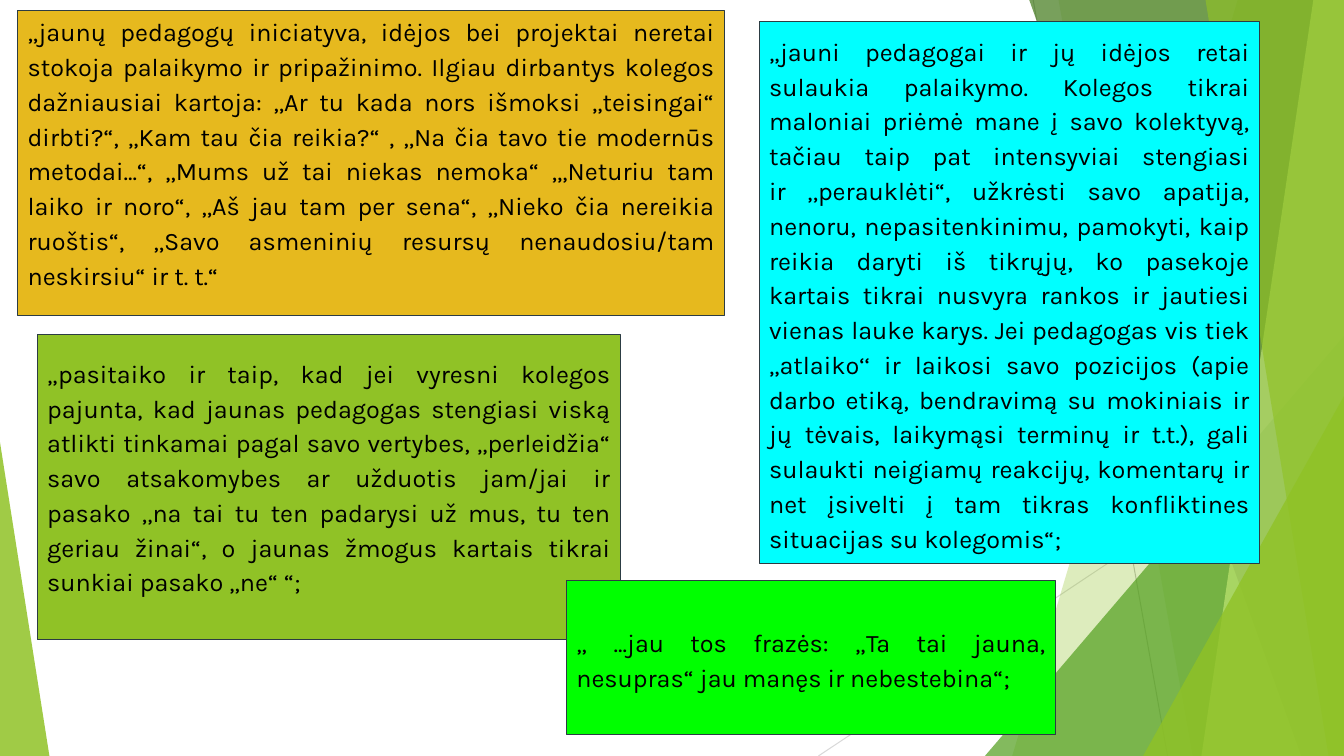
"""Build a slide of four teacher quotations over a faceted green backdrop."""
from dataclasses import dataclass

from lxml import etree
from pptx import Presentation
from pptx.dml.color import RGBColor
from pptx.enum.shapes import MSO_CONNECTOR, MSO_SHAPE
from pptx.enum.text import MSO_ANCHOR, PP_ALIGN
from pptx.oxml.ns import qn
from pptx.util import Pt

RECTANGLE = MSO_SHAPE.RECTANGLE
TRIANGLE = MSO_SHAPE.ISOSCELES_TRIANGLE
STRAIGHT = MSO_CONNECTOR.STRAIGHT
MIDDLE = MSO_ANCHOR.MIDDLE
JUSTIFY = PP_ALIGN.JUSTIFY


@dataclass(frozen=True)
class Theme:
    font: str = "Karla"
    size: float = 18
    line_spacing: float = 1.15
    text: str = "000000"
    outline: str = "2C3C43"
    line_width: float = 0.75
    gray: str = "BFBFBF"
    pale_gray: str = "D8D8D8"
    green: str = "90C226"
    mid_green: str = "54A021"
    dark_green: str = "3F7818"
    light_green: str = "BFE471"
    gold: str = "E6B91E"
    cyan: str = "00FFFF"
    lime: str = "00FF00"


theme = Theme()
WIDTH, HEIGHT = 960, 540


def paint_facet(shape, color, opacity):
    shape.shadow.inherit = False
    shape.line.fill.background()
    shape.fill.solid()
    shape.fill.fore_color.rgb = RGBColor.from_string(color)
    color_node = shape.fill._xPr.find(qn("a:solidFill"))[0]
    etree.SubElement(color_node, qn("a:alpha")).set("val", str(opacity * 1000))


def write_text(box, text, *, font, size, color, line_spacing, top, bottom):
    frame = box.text_frame
    frame.word_wrap = True
    frame.vertical_anchor = MIDDLE
    frame.margin_left = frame.margin_right = Pt(7.2)
    frame.margin_top, frame.margin_bottom = Pt(top), Pt(bottom)
    para = frame.paragraphs[0]
    para.alignment = JUSTIFY
    para.line_spacing = line_spacing
    span = para.add_run()
    span.text = text
    span.font.name = font
    span.font.size = Pt(size)
    span.font.color.rgb = RGBColor.from_string(color)


deck = Presentation()
deck.slide_width, deck.slide_height = Pt(WIDTH), Pt(HEIGHT)
page = deck.slides.add_slide(deck.slide_layouts[6])

rays = [
    (738, 0, 834, HEIGHT, theme.gray),
    (WIDTH, 290, 584.6, HEIGHT, theme.pale_gray),
]
for *ends, color in rays:
    ray = page.shapes.add_connector(STRAIGHT, *(Pt(value) for value in ends))
    ray.line.color.rgb = RGBColor.from_string(color)
    ray.line.width = Pt(theme.line_width)
    etree.SubElement(ray._element.spPr, qn("a:effectLst"))

facets = [
    ("band", (884.2, 723), theme.green, 30),
    ("band", (756, 851.8), theme.green, 20),
    ("triangle", (703.5, 240, 256.5, 1), theme.mid_green, 72),
    ("band", (735, 929.5), theme.dark_green, 70),
    ("band", (938.2, 858.2), theme.light_green, 70),
    ("band", (861, 949), theme.green, 65),
    ("triangle", (816.5, 283, 143.5, 1), theme.green, 80),
    ("triangle", (0, 316, 35.3, 0), theme.green, 85),
]
for kind, geometry, color, opacity in facets:
    if kind == "band":
        top_x, bottom_x = geometry
        outline = page.shapes.build_freeform(Pt(top_x), Pt(-0.6))
        corners = [(WIDTH, -0.6), (WIDTH, HEIGHT), (bottom_x, HEIGHT)]
        outline.add_line_segments([(Pt(x), Pt(y)) for x, y in corners])
        facet = outline.convert_to_shape()
    else:
        left, top, width, apex = geometry
        facet = page.shapes.add_shape(
            TRIANGLE, Pt(left), Pt(top), Pt(width), Pt(HEIGHT - top))
        facet.adjustments[0] = apex
    paint_facet(facet, color, opacity)

quotes = [
    ((12.6, 7.4, 505, 218), theme.gold, (0, 17),
     "„jaunų pedagogų iniciatyva, idėjos bei projektai neretai stokoja palaikymo ir "
     "pripažinimo. Ilgiau dirbantys kolegos dažniausiai kartoja: ,,Ar tu kada nors "
     "išmoksi ,,teisingai“ dirbti?“, ,,Kam tau čia reikia?“ , ,,Na čia tavo tie "
     "modernūs metodai...“, ,,Mums už tai niekas nemoka“ ,,,Neturiu tam laiko ir "
     "noro“, ,,Aš jau tam per sena“, ,,Nieko čia nereikia ruoštis“, ,,Savo asmeninių "
     "resursų nenaudosiu/tam neskirsiu“ ir t. t.“"),
    ((542.3, 15.3, 357.4, 387.2), theme.cyan, (7.2, 7.2),
     "„jauni pedagogai ir jų idėjos retai sulaukia palaikymo. Kolegos tikrai maloniai "
     "priėmė mane į savo kolektyvą, tačiau taip pat intensyviai stengiasi ir "
     ",,perauklėti“, užkrėsti savo apatija, nenoru, nepasitenkinimu, pamokyti, kaip "
     "reikia daryti iš tikrųjų, ko pasekoje kartais tikrai nusvyra rankos ir jautiesi "
     "vienas lauke karys. Jei pedagogas vis tiek ,,atlaiko‘‘ ir laikosi savo pozicijos "
     "(apie darbo etiką, bendravimą su mokiniais ir jų tėvais, laikymąsi terminų ir "
     "t.t.), gali sulaukti neigiamų reakcijų, komentarų ir net įsivelti į tam tikras "
     "konfliktines situacijas su kolegomis“;"),
    ((26.6, 239, 416.6, 218), theme.green, (0, 17),
     "„pasitaiko ir taip, kad jei vyresni kolegos pajunta, kad jaunas pedagogas "
     "stengiasi viską atlikti tinkamai pagal savo vertybes, ,,perleidžia“ savo "
     "atsakomybes ar užduotis jam/jai ir pasako ,,na tai tu ten padarysi už mus, tu "
     "ten geriau žinai“, o jaunas žmogus kartais tikrai sunkiai pasako ,,ne“ “;"),
    ((404.6, 414.7, 349.3, 109.7), theme.lime, (7.2, 7.2),
     "„ ...jau tos frazės: „Ta tai jauna, nesupras“ jau manęs ir nebestebina“;"),
]
for bounds, color, (top, bottom), text in quotes:
    box = page.shapes.add_shape(RECTANGLE, *(Pt(value) for value in bounds))
    box.shadow.inherit = False
    box.fill.solid()
    box.fill.fore_color.rgb = RGBColor.from_string(color)
    box.line.color.rgb = RGBColor.from_string(theme.outline)
    box.line.width = Pt(theme.line_width)
    write_text(box, text, font=theme.font, size=theme.size, color=theme.text,
               line_spacing=theme.line_spacing, top=top, bottom=bottom)

deck.save("out.pptx")
